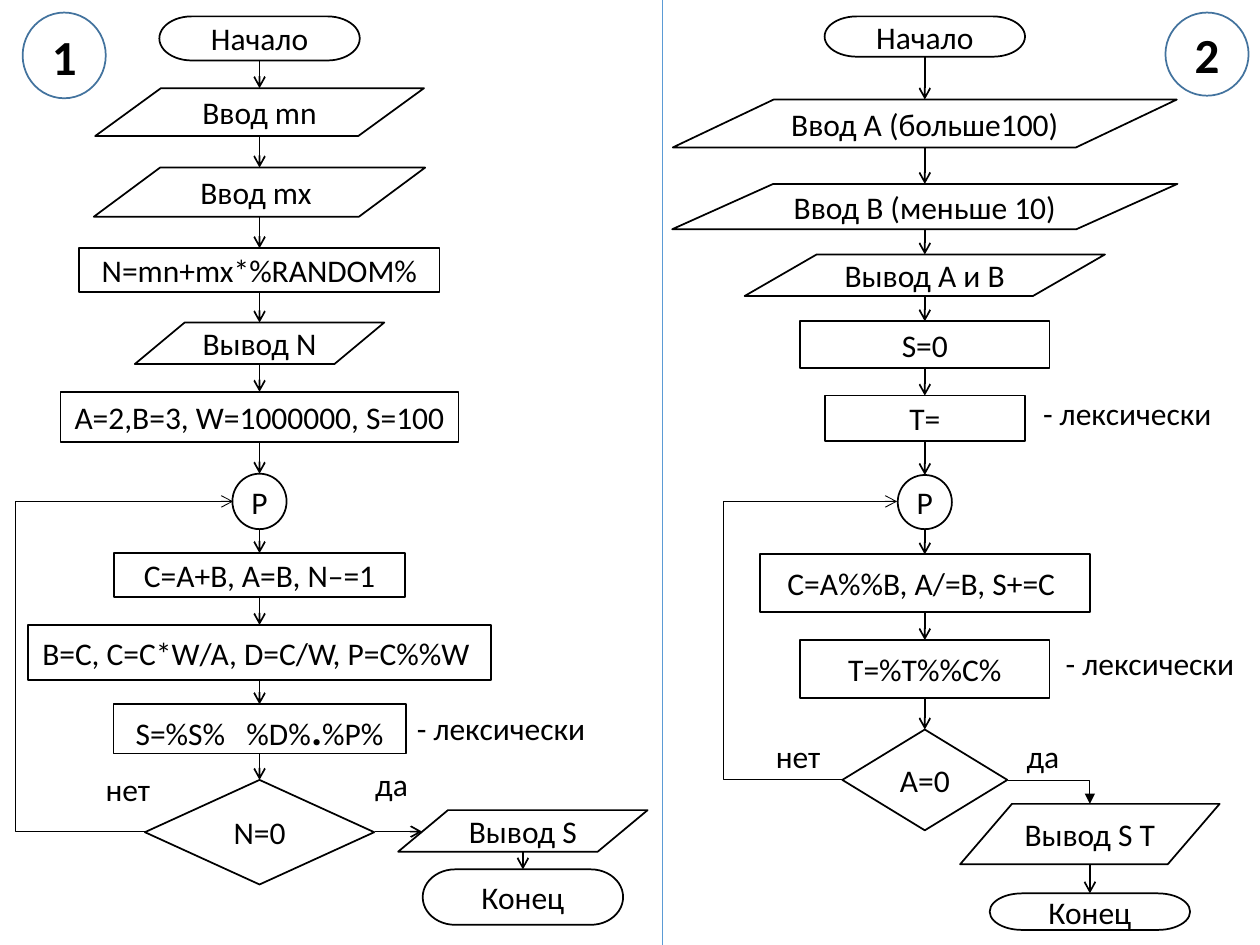
import dataclasses

import lxml.etree
import pptx
import pptx.dml.color
import pptx.enum.shapes
import pptx.enum.text
import pptx.oxml.ns
import pptx.util

Inches = pptx.util.Inches
Pt = pptx.util.Pt
qn = pptx.oxml.ns.qn
RGBColor = pptx.dml.color.RGBColor
MSO_SHAPE = pptx.enum.shapes.MSO_SHAPE
MSO_CONNECTOR = pptx.enum.shapes.MSO_CONNECTOR

TERMINATOR = MSO_SHAPE.FLOWCHART_TERMINATOR
DATA = MSO_SHAPE.FLOWCHART_DATA
PROCESS = MSO_SHAPE.RECTANGLE
CIRCLE = MSO_SHAPE.OVAL
DECISION = MSO_SHAPE.FLOWCHART_DECISION


@dataclasses.dataclass(frozen=True)
class Theme:
    font: str = "Calibri"
    text_size: int = 18
    dot_size: int = 24
    badge_size: int = 28
    outline: float = 1
    thin: float = 0.5
    ink: RGBColor = RGBColor(0x00, 0x00, 0x00)
    paper: RGBColor = RGBColor(0xFF, 0xFF, 0xFF)
    badge_line: RGBColor = RGBColor(0x43, 0x73, 0x9E)
    divider: RGBColor = RGBColor(0x5B, 0x9B, 0xD5)


class FlowchartSlide:
    def __init__(self, slide, theme):
        self.shapes = slide.shapes
        self.theme = theme

    def style_paragraph(self, paragraph, size, bold=False):
        font = paragraph.font
        font.name = self.theme.font
        font.size = Pt(size)
        font.bold = bold
        font.color.rgb = self.theme.ink

    def outlined_shape(self, kind, left, top, width, height, line_color):
        shape = self.shapes.add_shape(
            kind, Inches(left), Inches(top), Inches(width), Inches(height))
        shape.shadow.inherit = False
        shape.line.color.rgb = line_color
        shape.line.width = Pt(self.theme.outline)
        frame = shape.text_frame
        frame.word_wrap = False
        frame.vertical_anchor = pptx.enum.text.MSO_ANCHOR.MIDDLE
        frame.paragraphs[0].alignment = pptx.enum.text.PP_ALIGN.CENTER
        return shape

    def step(self, kind, center, top, width, height, text):
        """Draw one flowchart block; a tuple of text parts has its dot enlarged."""
        shape = self.outlined_shape(
            kind, center - width / 2, top, width, height, self.theme.ink)
        shape.fill.solid()
        shape.fill.fore_color.rgb = self.theme.paper
        paragraph = shape.text_frame.paragraphs[0]
        self.style_paragraph(paragraph, self.theme.text_size)
        for part in text if isinstance(text, tuple) else (text,):
            run = paragraph.add_run()
            run.text = part
            if part == ".":
                run.font.size = Pt(self.theme.dot_size)
                run.font.bold = True

    def chain(self, center, steps):
        """Stack steps on one axis and join each to the next with an arrow."""
        previous_bottom = None
        for kind, top, width, height, text in steps:
            self.step(kind, center, top, width, height, text)
            if previous_bottom is not None:
                self.arrow((center, previous_bottom), (center, top))
            previous_bottom = top + height

    def badge(self, left, height, text):
        shape = self.outlined_shape(
            CIRCLE, left, 0.1, 0.66, height, self.theme.badge_line)
        shape.fill.background()
        paragraph = shape.text_frame.paragraphs[0]
        paragraph.text = text
        self.style_paragraph(paragraph, self.theme.badge_size, bold=True)

    def label(self, left, top, width, text):
        box = self.shapes.add_textbox(
            Inches(left), Inches(top), Inches(width), Inches(0.4))
        box.text_frame.word_wrap = False
        box.text_frame.auto_size = pptx.enum.text.MSO_AUTO_SIZE.SHAPE_TO_FIT_TEXT
        paragraph = box.text_frame.paragraphs[0]
        paragraph.text = text
        self.style_paragraph(paragraph, self.theme.text_size)

    def connector(self, kind, start, end, color, width, head=None):
        connector = self.shapes.add_connector(
            kind, *(Inches(value) for value in (*start, *end)))
        connector.line.color.rgb = color
        connector.line.width = Pt(width)
        properties = connector._element.spPr
        if head:
            line = properties.find(qn("a:ln"))
            lxml.etree.SubElement(line, qn("a:tailEnd"), type=head)
        lxml.etree.SubElement(properties, qn("a:effectLst"))
        return properties.find(qn("a:prstGeom"))

    def arrow(self, start, end):
        self.connector(MSO_CONNECTOR.STRAIGHT, start, end,
                       self.theme.ink, self.theme.outline, "arrow")

    def loop_back(self, start, end, turn):
        """Arrow that leaves to the left, rises at x = turn and comes back."""
        geometry = self.connector(MSO_CONNECTOR.ELBOW, start, end,
                                  self.theme.ink, self.theme.thin, "arrow")
        ratio = (turn - start[0]) / (end[0] - start[0])
        adjustments = geometry.find(qn("a:avLst"))
        lxml.etree.SubElement(adjustments, qn("a:gd"), name="adj1",
                              fmla=f"val {round(ratio * 100000)}")

    def corner_arrow(self, start, end):
        geometry = self.connector(MSO_CONNECTOR.ELBOW, start, end,
                                  self.theme.ink, self.theme.thin, "triangle")
        geometry.set("prst", "bentConnector2")

    def divider(self, left, height):
        self.connector(MSO_CONNECTOR.STRAIGHT, (left, 0), (left, height),
                       self.theme.divider, self.theme.thin)


def draw_first_algorithm(flowchart):
    flowchart.badge(0.18, 0.68, "1")
    flowchart.chain(2.06, [
        (TERMINATOR, 0.13, 1.59, 0.35, "Начало"),
        (DATA, 0.7, 2.61, 0.38, "Ввод mn"),
        (DATA, 1.33, 2.63, 0.39, "Ввод mx "),
        (PROCESS, 1.97, 2.86, 0.35, "N=mn+mx*%RANDOM%"),
        (DATA, 2.56, 1.98, 0.33, "Вывод N"),
        (PROCESS, 3.11, 3.16, 0.4, "A=2,B=3, W=1000000, S=100"),
        (CIRCLE, 3.76, 0.43, 0.44, "P"),
        (PROCESS, 4.39, 2.31, 0.35, "C=A+B, A=B, N–=1"),
        (PROCESS, 4.96, 3.68, 0.44, "B=C, C=C*W/A, D=C/W, P=C%%W "),
        (PROCESS, 5.59, 2.32, 0.39, ("S=%S%   %D%", ".", "%P%")),
        (DECISION, 6.19, 1.82, 0.83, "N=0"),
    ])
    flowchart.chain(4.15, [
        (DATA, 6.43, 1.98, 0.33, "Вывод S"),
        (TERMINATOR, 6.9, 1.59, 0.44, "Конец"),
    ])
    flowchart.arrow((2.98, 6.6), (3.35, 6.6))
    flowchart.loop_back((1.16, 6.6), (1.85, 3.98), turn=0.12)
    flowchart.label(2.88, 6.02, 0.46, "да")
    flowchart.label(0.74, 6.06, 0.56, "нет")
    flowchart.label(3.21, 5.58, 1.56, "- лексически")


def draw_second_algorithm(flowchart):
    flowchart.badge(9.25, 0.66, "2")
    flowchart.chain(7.34, [
        (TERMINATOR, 0.13, 1.59, 0.32, "Начало"),
        (DATA, 0.79, 4, 0.38, "Ввод A (больше100)"),
        (DATA, 1.46, 4.01, 0.36, "Ввод B (меньше 10)"),
        (DATA, 2.02, 2.86, 0.33, "Вывод A и B"),
        (PROCESS, 2.55, 1.98, 0.37, "S=0"),
        (PROCESS, 3.14, 1.59, 0.36, "T="),
        (CIRCLE, 3.77, 0.43, 0.43, "P"),
        (PROCESS, 4.4, 2.62, 0.46, "C=A%%B, A/=B, S+=C "),
        (PROCESS, 5.08, 1.98, 0.46, "T=%T%%C%"),
        (DECISION, 5.79, 1.31, 0.8, "A=0"),
    ])
    flowchart.chain(8.65, [
        (DATA, 6.38, 2.06, 0.48, "Вывод S T"),
        (TERMINATOR, 7.09, 1.59, 0.29, "Конец"),
    ])
    flowchart.corner_arrow((8, 6.19), (8.65, 6.38))
    flowchart.loop_back((6.68, 6.19), (7.12, 3.98), turn=5.74)
    flowchart.label(8.05, 5.8, 0.46, "да")
    flowchart.label(6.06, 5.8, 0.56, "нет")
    flowchart.label(8.36, 5.06, 1.56, "- лексически")
    flowchart.label(8.18, 3.08, 1.56, "- лексически")


def main():
    presentation = pptx.Presentation()
    presentation.slide_width = Inches(10)
    presentation.slide_height = Inches(7.5)
    slide = presentation.slides.add_slide(presentation.slide_layouts[6])
    flowchart = FlowchartSlide(slide, Theme())
    draw_first_algorithm(flowchart)
    draw_second_algorithm(flowchart)
    flowchart.divider(5.26, 7.5)
    presentation.save("out.pptx")


if __name__ == "__main__":
    main()
